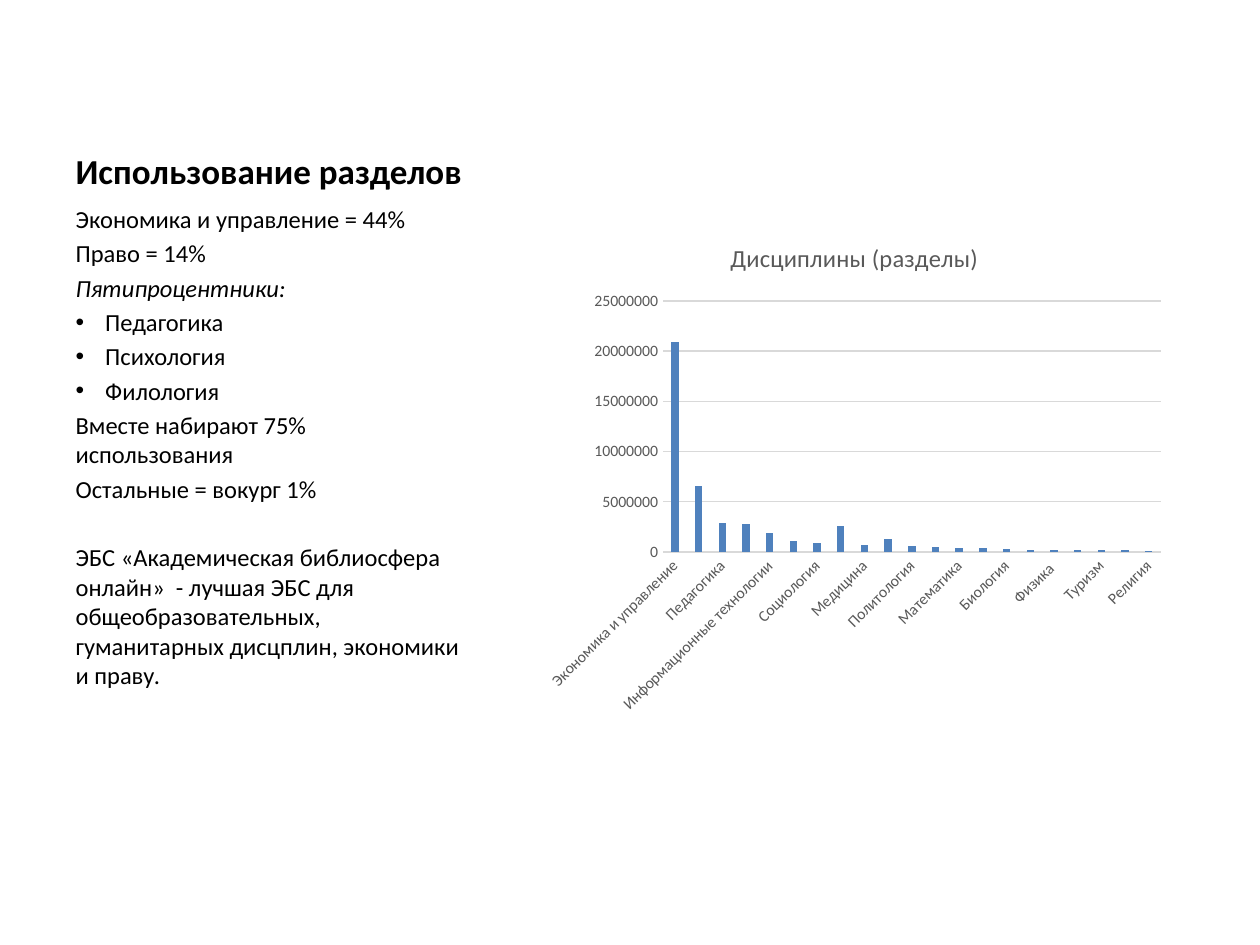
from lxml import etree
from pptx import Presentation
from pptx.chart.data import CategoryChartData
from pptx.dml.color import RGBColor
from pptx.enum.chart import XL_CHART_TYPE, XL_TICK_MARK
from pptx.enum.text import MSO_ANCHOR, MSO_AUTO_SIZE, PP_ALIGN
from pptx.oxml.ns import qn
from pptx.util import Pt

FACE = "Calibri"
GRAY = "595959"
RULE = "D9D9D9"
LINES = [
    ("Экономика и управление = 44%", {}),
    ("Право = 14%", {}),
    ("Пятипроцентники:", {"italic": True}),
    ("Педагогика", {"bullet": True}),
    ("Психология", {"bullet": True}),
    ("Филология", {"bullet": True}),
    ("Вместе набирают 75% использования", {}),
    ("Остальные = вокург 1%", {}),
    ("ЭБС «Академическая библиосфера онлайн»  - лучшая ЭБС для "
     "общеобразовательных, гуманитарных дисцплин, экономики и праву.",
     {"before": 22.4}),
]
USAGE = {
    "Экономика и управление": 20900000,
    "Правоведение": 6600000,
    "Педагогика": 2900000,
    "Психология": 2800000,
    "Информационные технологии": 1900000,
    "Философия": 1100000,
    "Социология": 900000,
    "Языкознание": 2600000,
    "Медицина": 700000,
    "История": 1300000,
    "Политология": 600000,
    "Физическая культура и спорт": 500000,
    "Математика": 400000,
    "Культурология": 400000,
    "Биология": 300000,
    "Искусствоведение": 200000,
    "Физика ": 200000,
    "Реклама": 200000,
    "Туризм": 200000,
    "Транспорт": 200000,
    "Религия": 100000,
}


def paint(code):
    return RGBColor.from_string(code)


def style(font, size, color, bold=False, italic=False):
    font.name = FACE
    font.size = Pt(size)
    font.bold = bold
    font.italic = italic
    font.color.rgb = paint(color)


def write(para, text, size=14, color="000000", bold=False, italic=False,
          bullet=False, before=0):
    props = para._p.get_or_add_pPr()
    indent = Pt(16.9) if bullet else 0
    props.set("marL", str(indent))
    props.set("indent", str(-indent))
    if bullet:
        etree.SubElement(props, qn("a:buFont")).set("typeface", "Arial")
        etree.SubElement(props, qn("a:buChar")).set("char", "•")
    else:
        etree.SubElement(props, qn("a:buNone"))
    para.alignment = PP_ALIGN.LEFT
    para.space_before = Pt(before)
    run = para.add_run()
    run.text = text
    style(run.font, size, color, bold, italic)


def place(shape, box, anchor):
    shape.left, shape.top, shape.width, shape.height = map(Pt, box)
    frame = shape.text_frame
    frame.word_wrap = True
    frame.auto_size = MSO_AUTO_SIZE.NONE
    frame.vertical_anchor = anchor
    return frame


def add_head(slide, box):
    frame = place(slide.shapes.title, box, MSO_ANCHOR.BOTTOM)
    write(frame.paragraphs[0], "Использование разделов", size=20, bold=True)


def add_list(slide, box):
    frame = place(slide.placeholders[1], box, MSO_ANCHOR.TOP)
    for index, (text, format) in enumerate(LINES):
        para = frame.add_paragraph() if index else frame.paragraphs[0]
        write(para, text, **{"before": 2.8 if index else 0, **format})


def add_usage(slide, box):
    data = CategoryChartData()
    data.categories = list(USAGE)
    data.add_series("Series 1", list(USAGE.values()))
    chart = slide.shapes.add_chart(
        XL_CHART_TYPE.COLUMN_CLUSTERED, *map(Pt, box), data).chart
    style(chart.font, 10, "000000")
    chart.has_legend = False
    chart.has_title = True
    write(chart.chart_title.text_frame.paragraphs[0],
          "Дисциплины (разделы)", color=GRAY)
    chart.chart_title.include_in_layout = False

    plot = chart.plots[0]
    plot.gap_width = 219
    plot.overlap = -27
    plot.vary_by_categories = False
    fill = plot.series[0].format.fill
    fill.solid()
    fill.fore_color.rgb = paint("4F81BD")

    names, scale = chart.category_axis, chart.value_axis
    for axis in (names, scale):
        axis.major_tick_mark = XL_TICK_MARK.NONE
        axis.minor_tick_mark = XL_TICK_MARK.NONE
        style(axis.tick_labels.font, 9, GRAY)
    names._element.find(qn("c:txPr")).find(qn("a:bodyPr")).set("rot", "-60000000")
    scale.has_major_gridlines = True
    scale.format.line.fill.background()
    scale.tick_labels.number_format = "General"
    scale.tick_labels.number_format_is_linked = False
    for line in (names.format.line, scale.major_gridlines.format.line):
        line.color.rgb = paint(RULE)
        line.width = Pt(0.75)


def main():
    deck = Presentation()
    deck.slide_width, deck.slide_height = Pt(720), Pt(540)
    slide = deck.slides.add_slide(deck.slide_layouts[1])
    add_head(slide, (36, 21.5, 237, 91.5))
    add_list(slide, (36, 113, 237, 369.5))
    add_usage(slide, (306, 125.65, 364.5, 288))
    deck.save("out.pptx")


if __name__ == "__main__":
    main()
